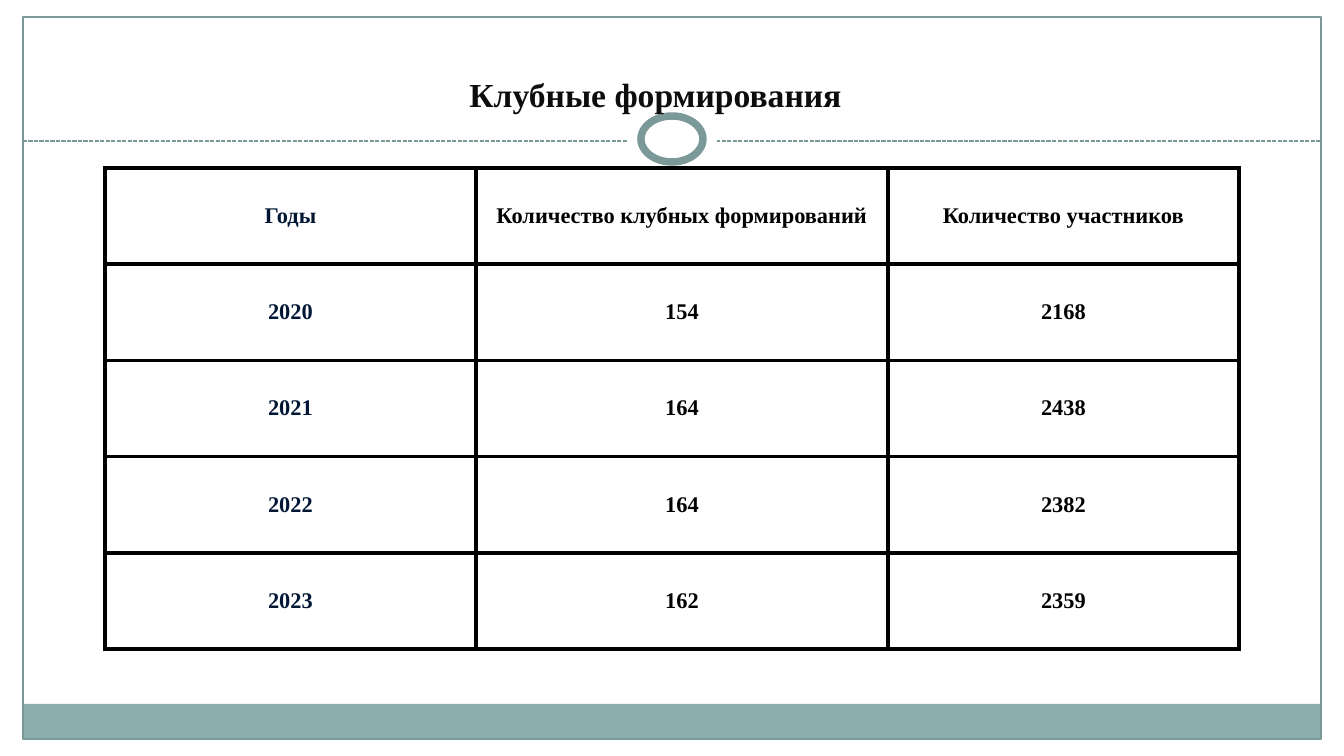
"""Builds a slide with a table of club groups and their participants by year."""
from lxml.etree import SubElement
from pptx import Presentation
from pptx.dml.color import RGBColor
from pptx.enum.dml import MSO_LINE
from pptx.enum.shapes import MSO_CONNECTOR, MSO_SHAPE
from pptx.enum.text import MSO_ANCHOR as ANCHOR, PP_ALIGN as ALIGN
from pptx.oxml.ns import qn
from pptx.util import Emu, Pt

COLORS = {"white": "FFFFFF", "band": "8CADAE", "rule": "7C999A",
          "title": "0D0D0D", "year": "011635", "black": "000000"}
FONT = "Times New Roman"


def px(length):
    return Emu(round(length * 914400 / 134.4))


def write(frame, text, size, color):
    frame.text = text
    paragraph = frame.paragraphs[0]
    paragraph.alignment = ALIGN.CENTER
    font = paragraph.runs[0].font
    font.name, font.size, font.bold = FONT, Pt(size), True
    font.color.rgb = RGBColor.from_string(COLORS[color])


deck = Presentation()
deck.slide_width, deck.slide_height = px(1344), px(756)
slide = deck.slides.add_slide(deck.slide_layouts[5])
shapes = slide.shapes

decorations = [
    (MSO_SHAPE.RECTANGLE, (22, 704, 1298, 34), "band", 0),
    (MSO_SHAPE.RECTANGLE, (23, 17, 1298, 722), None, 0.75),
    (MSO_SHAPE.OVAL, (627, 105, 90, 67), "white", 0),
    (MSO_SHAPE.OVAL, (641, 116, 62, 46), "white", 4),
]

divider = shapes.add_connector(MSO_CONNECTOR.STRAIGHT, px(23), px(141), px(1321), px(141))
divider.line.color.rgb = RGBColor.from_string(COLORS["rule"])
divider.line.width = Pt(0.75)
divider.line.dash_style = MSO_LINE.SQUARE_DOT
SubElement(divider._element.spPr, qn("a:effectLst"))

for preset, box, fill, weight in decorations:
    decoration = shapes.add_shape(preset, *map(px, box))
    decoration.shadow.inherit = False
    if fill:
        decoration.fill.solid()
        decoration.fill.fore_color.rgb = RGBColor.from_string(COLORS[fill])
    else:
        decoration.fill.background()
    if weight:
        decoration.line.color.rgb = RGBColor.from_string(COLORS["rule"])
        decoration.line.width = Pt(weight)
    else:
        decoration.line.fill.background()

title = shapes.title
title.left, title.top, title.width, title.height = map(px, (94, 58, 1123, 84))
heading = title.text_frame
heading.vertical_anchor = ANCHOR.TOP
heading.margin_left = heading.margin_right = heading.margin_bottom = px(13)
heading.margin_top = px(16)
write(heading, "Клубные формирования", 18, "title")
shapes._spTree.append(title._element)

rows = [
    ("Годы", "Количество клубных формирований", "Количество участников"),
    ("2020", "154", "2168"),
    ("2021", "164", "2438"),
    ("2022", "164", "2382"),
    ("2023", "162", "2359"),
]
widths = (371, 412, 351)
clubs = shapes.add_table(len(rows), len(widths), px(105), px(168), px(sum(widths)), px(481)).table
for column, width in zip(clubs.columns, widths):
    column.width = px(width)

for row_index, row in enumerate(rows):
    for column_index, text in enumerate(row):
        cell = clubs.cell(row_index, column_index)
        cell.vertical_anchor = ANCHOR.MIDDLE
        cell.margin_left = cell.margin_right = px(13)
        cell.margin_top = cell.margin_bottom = px(13)
        write(cell.text_frame, text, 12, "black" if column_index else "year")
        properties = cell._tc.get_or_add_tcPr()
        for side in ("a:lnL", "a:lnR", "a:lnT", "a:lnB"):
            border = SubElement(properties, qn(side), w=str(Pt(2.25)))
            SubElement(SubElement(border, qn("a:solidFill")), qn("a:srgbClr"), val=COLORS["black"])
        cell.fill.background()

deck.save("out.pptx")
